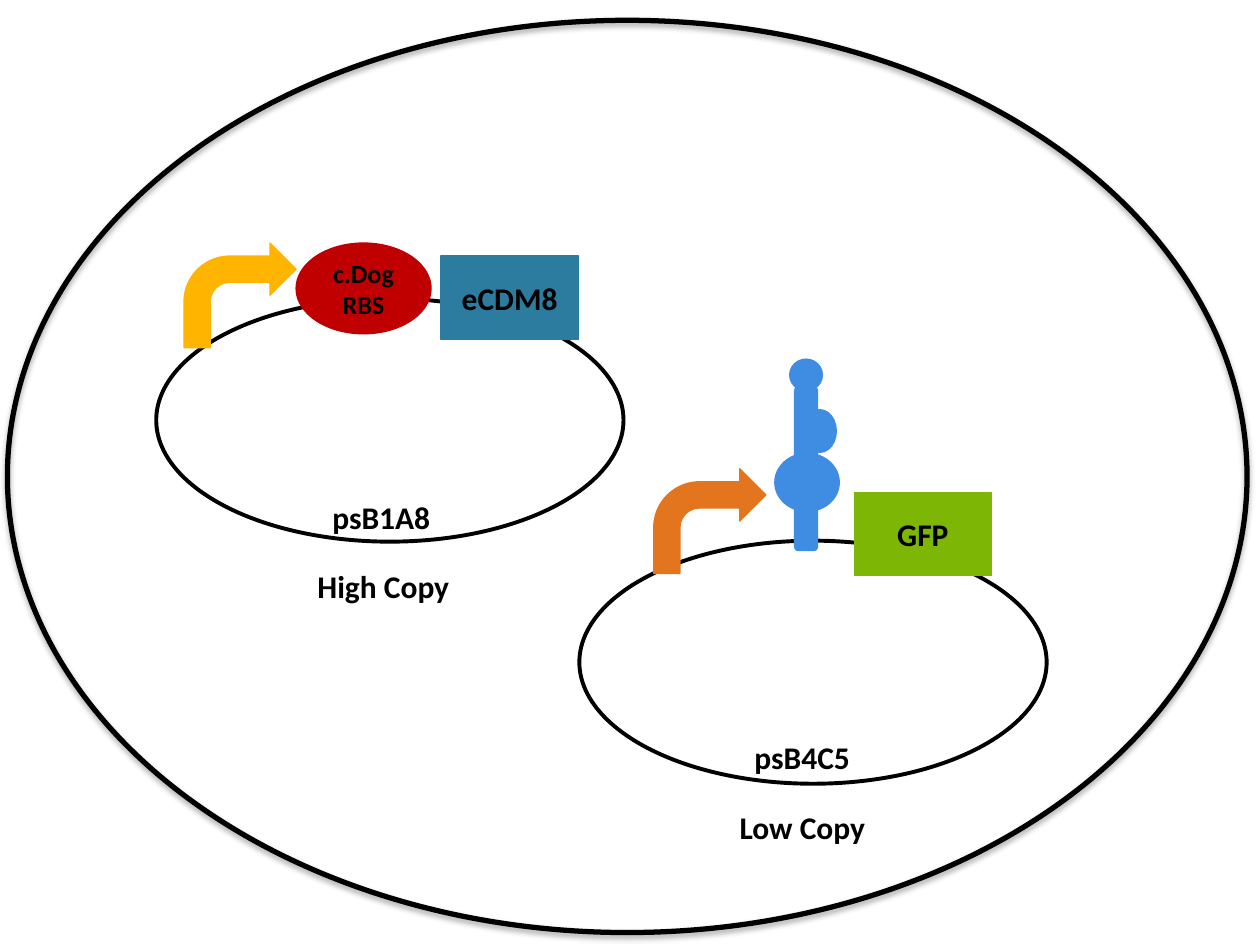
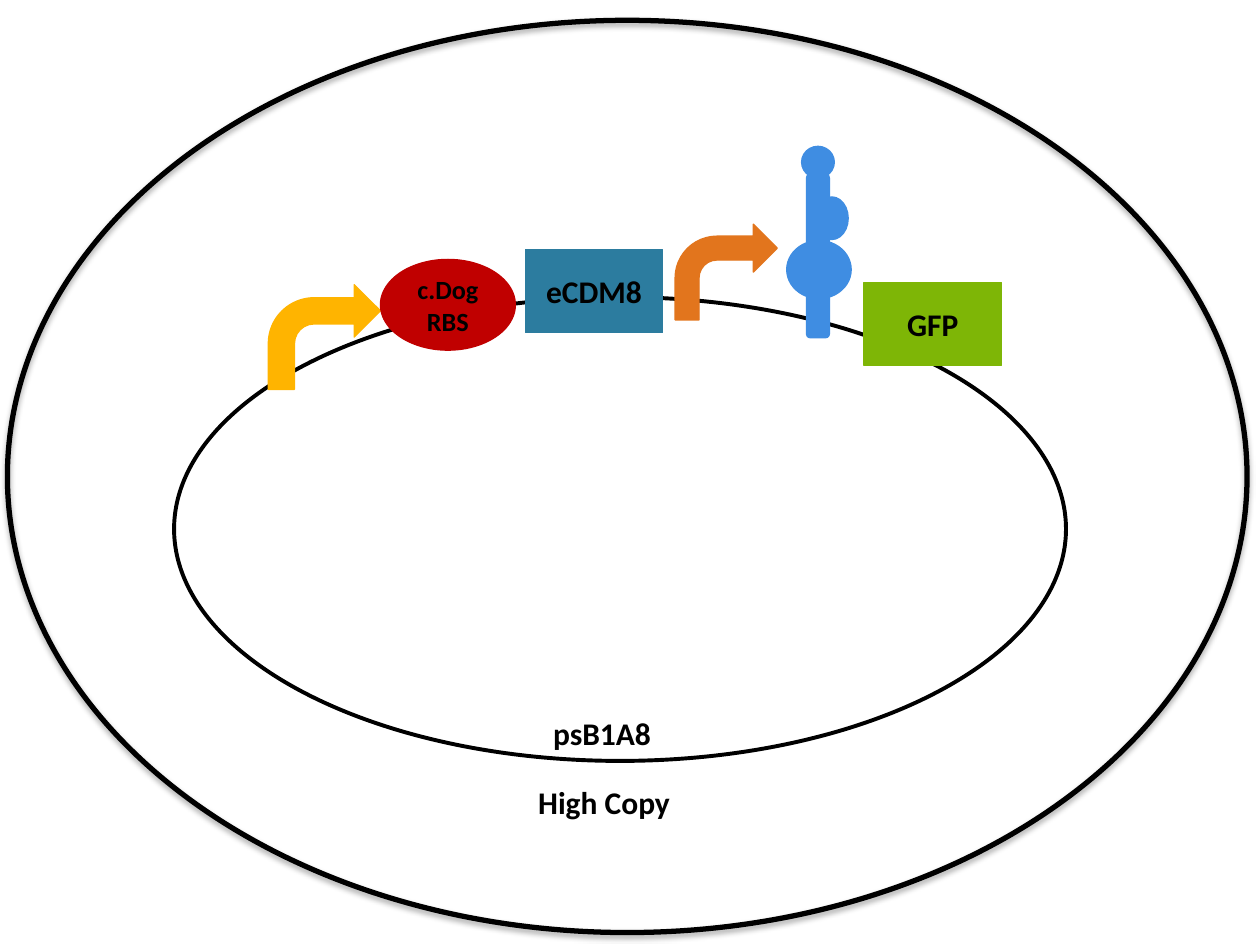
from lxml import etree
from pptx import Presentation
from pptx import util as u
from pptx.dml import color
from pptx.enum import shapes, text
from pptx.oxml import ns

Cm, Pt = u.Cm, u.Pt
Kind = shapes.MSO_SHAPE
HEX = {"ink": "000000", "rna": "3F8DE2", "low": "E2751D", "high": "FFB400",
       "gfp": "7EB606", "gene": "2C7C9F", "rbs": "C00000"}


def rgb(name):
    return color.RGBColor.from_string(HEX[name])


class Sketch:
    """Holds the style and the current slide; lengths are in centimetres."""
    font = "Calibri"

    def __init__(self, deck):
        self.deck = deck
        self.slide = None

    def page(self):
        self.slide = self.deck.slides.add_slide(self.deck.slide_layouts[6])

    def letter(self, frame, words, size):
        frame.text = words
        font = frame.paragraphs[0].runs[0].font
        font.name, font.size, font.bold = self.font, Pt(size), True
        font.color.rgb = rgb("ink")

    def solid(self, kind, x, y, w, h, hue, words="", size=18):
        part = self.slide.shapes.add_shape(kind, Cm(x), Cm(y), Cm(w), Cm(h))
        part.shadow.inherit = False
        part.fill.solid()
        part.fill.fore_color.rgb = part.line.color.rgb = rgb(hue)
        part.line.width = Pt(0.75)
        if words:
            frame = part.text_frame
            frame.word_wrap = True
            frame.vertical_anchor = text.MSO_ANCHOR.MIDDLE
            self.letter(frame, words, size)
            frame.paragraphs[0].alignment = text.PP_ALIGN.CENTER
        return part

    def ring(self, x, y, w, h, width=2.25):
        part = self.solid(Kind.OVAL, x, y, w, h, "ink")
        part.fill.background()
        part.line.width = Pt(width)
        return part

    def label(self, x, y, w, words):
        box = self.slide.shapes.add_textbox(Cm(x), Cm(y), Cm(w), Cm(1.02))
        box.text_frame.word_wrap = False
        box.text_frame.auto_size = text.MSO_AUTO_SIZE.SHAPE_TO_FIT_TEXT
        self.letter(box.text_frame, words, 18)

    def names(self, x, y, plasmid, copies):
        self.label(x, y, 2.5, plasmid)
        self.label(x - 0.3, y + 1.4, 3.2, copies)

    def start(self, x, y, hue, w=2.26, h=2.11):
        self.solid(Kind.BENT_ARROW, x, y, w, h, hue)

    def gene(self, x, y, hue, words):
        self.solid(Kind.RECTANGLE, x, y, 2.77, 1.68, hue, words)

    def site(self, x, y):
        self.solid(Kind.OVAL, x, y, 2.72, 1.83, "rbs", "c.Dog RBS", 15)

    def rna(self, x, y):
        self.solid(Kind.ROUNDED_RECTANGLE, x + 0.4, y + 0.56, 0.46, 3.3, "rna")
        # Loops: wide one, side bulge, head
        for dx, dy, w, h in ((0, 1.9, 1.3, 1.17), (0.58, 1.02, 0.66, 0.86),
                             (0.3, 0, 0.66, 0.64)):
            self.solid(Kind.OVAL, x + dx, y + dy, w, h, "rna")

    def cell(self):
        props = self.ring(0.15, 0.41, 24.99, 18.39, 3)._element.spPr
        glow = etree.SubElement(props.find(ns.qn("a:effectLst")), ns.qn("a:outerShdw"),
                                blurRad="40000", dist="23000", dir="5400000",
                                rotWithShape="0")
        tint = etree.SubElement(glow, ns.qn("a:srgbClr"), val=HEX["ink"])
        etree.SubElement(tint, ns.qn("a:alpha"), val="35000")


def two(art):
    art.page()
    # Low copy plasmid
    art.ring(11.68, 10.9, 9.42, 4.9)
    art.rna(15.62, 7.24)
    art.start(13.18, 9.45, "low")
    art.gene(17.22, 9.93, "gfp", "GFP")
    # High copy plasmid
    art.ring(3.15, 6.02, 9.42, 4.9)
    art.start(3.71, 4.9, "high")
    art.gene(8.89, 5.16, "gene", "eCDM8")
    art.site(5.97, 4.9)
    art.names(6.45, 9.91, "psB1A8", "High Copy")
    art.names(14.96, 14.76, "psB4C5", "Low Copy")
    art.cell()


def one(art):
    art.page()
    # Both devices on a single plasmid
    art.ring(3.51, 5.99, 17.98, 9.35)
    art.rna(15.86, 2.95)
    art.start(13.61, 4.52, "low", 2.06, 1.93)
    art.gene(17.42, 5.69, "gfp", "GFP")
    art.start(5.41, 5.74, "high")
    art.gene(10.59, 5.03, "gene", "eCDM8")
    art.site(7.67, 5.23)
    art.names(10.9, 14.27, "psB1A8", "High Copy")
    art.cell()


def main():
    deck = Presentation()
    deck.slide_width, deck.slide_height = Cm(25.4), Cm(19.05)
    art = Sketch(deck)
    two(art)
    one(art)
    deck.save("out.pptx")


if __name__ == "__main__":
    main()
